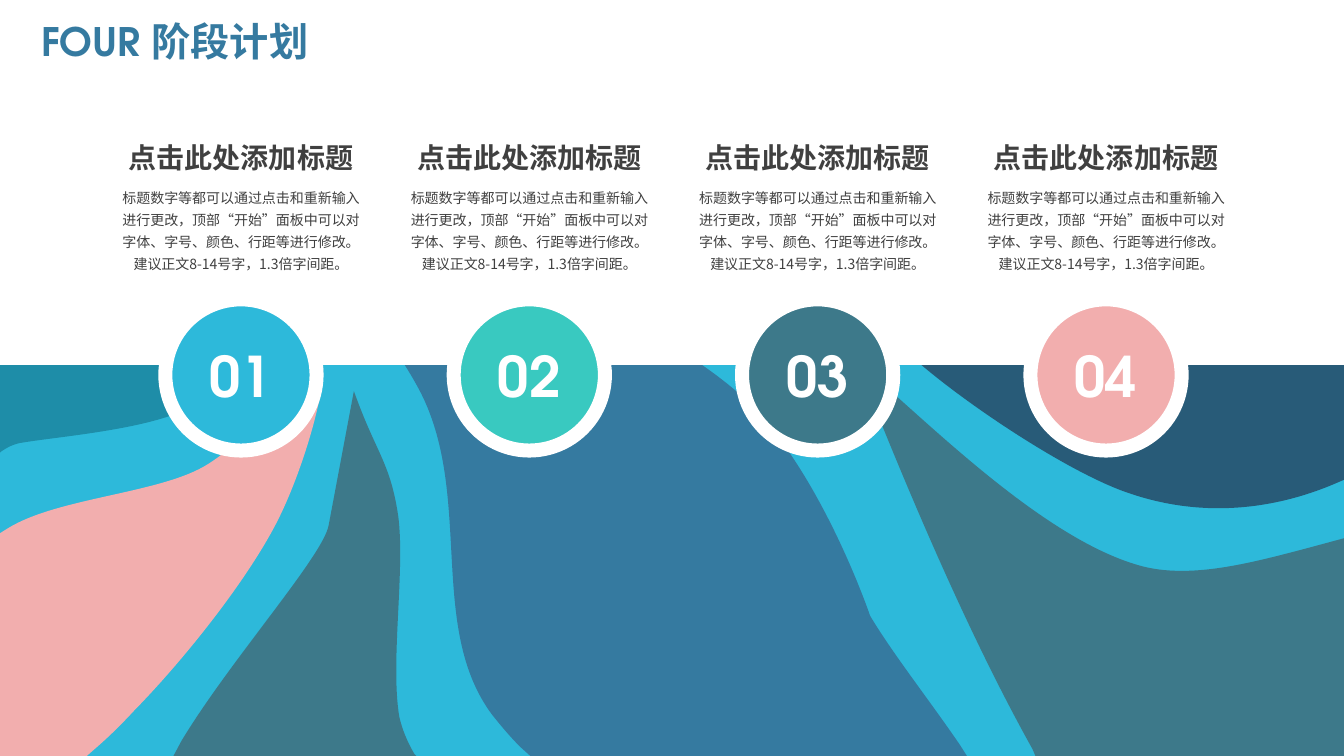
from lxml import etree
from pptx import Presentation
from pptx import util as u
from pptx.dml.color import RGBColor
from pptx.enum import lang, shapes, text
from pptx.oxml import ns

COLORS = {
    "sky": "2DB9DA", "lagoon": "1E8DA8", "pink": "F2AEAE", "slate": "3D798A",
    "blue": "357AA0", "navy": "285B78", "mint": "39C9C0", "white": "FFFFFF", "ink": "404040",
}
DISPLAY, CJK = "TeX Gyre Adventor", "Noto Sans CJK SC"

WAVES = [
    ("lagoon", [
        (0, 0), (0.33, 0), (0.38, 0.08), (0.87, 0.8, 1.61, 1.89, 1.95, 2.33),
        (2.4, 2.92, 2.73, 2.77, 2.72, 3.05), (2.71, 3.34, 2.31, 3.81, 1.89, 4.04),
        (1.48, 4.26, 0.59, 4.33, 0.23, 4.39), (0.14, 4.4, 0.07, 4.44, 0.01, 4.48), (0, 4.49)]),
    ("pink", [
        (3.15, 3.55), (3.16, 3.55, 3.17, 3.56, 3.18, 3.56),
        (3.29, 3.66, 3.03, 4.65, 2.72, 5.23), (2.41, 5.81, 1.81, 6.56, 1.33, 7.05),
        (1.21, 7.18, 1.08, 7.31, 0.94, 7.43), (0.86, 7.5), (0, 7.5), (0, 5.29), (0.08, 5.24),
        (0.57, 4.94, 1.54, 4.9, 2.02, 4.63), (2.53, 4.34, 3, 3.57, 3.15, 3.55)]),
    ("slate", [
        (3.51, 3.88), (3.73, 4.5, 3.87, 4.58, 3.95, 5.12), (4.02, 5.66, 3.87, 6.56, 3.96, 7.11),
        (3.99, 7.24, 4.04, 7.36, 4.11, 7.48), (4.13, 7.5), (1.72, 7.5), (1.8, 7.35),
        (2.29, 6.54, 3.21, 5.51, 3.26, 5.21)]),
    ("blue", [
        (1.14, 0), (2.78, 0), (2.85, 0.11), (3.12, 0.62, 3.5, 1.26, 4.02, 1.74),
        (4.84, 2.5, 6.62, 3.24, 7.39, 3.96), (8.15, 4.69, 8.63, 6.11, 8.63, 6.11),
        (8.85, 6.48, 9.22, 6.95, 9.52, 7.39), (9.59, 7.5), (5.26, 7.5), (5.16, 7.41),
        (5.05, 7.3, 4.96, 7.19, 4.88, 7.09), (4.24, 6.23, 4.69, 4.94, 4.18, 3.91),
        (3.66, 2.89, 2.3, 1.69, 1.77, 0.95), (1.51, 0.58, 1.29, 0.27, 1.15, 0.02)]),
    ("navy", [
        (13.19, 2.81), (13.33, 2.81), (13.33, 4.76), (13.26, 4.79),
        (12.66, 5.05, 11.94, 5.15, 11.19, 4.89), (10.45, 4.64, 8.98, 3.6, 8.79, 3.26),
        (9.32, 3.26, 10.25, 3.18, 10.98, 3.11), (11.51, 3.03, 12.41, 2.79, 13.19, 2.81)]),
    ("slate", [
        (8.49, 3.58), (9.14, 4.12, 10.31, 5.33, 11.3, 5.61),
        (11.79, 5.75, 12.39, 5.59, 12.96, 5.44), (13.33, 5.34), (13.33, 7.5), (10.27, 7.5),
        (10.24, 7.43), (9.43, 5.98, 8.72, 4.14, 8.49, 3.58)]),
]
STAGES = [("01", "sky"), ("02", "mint"), ("03", "slate"), ("04", "pink")]
STAGE_TITLE = "点击此处添加标题"
STAGE_BODY = ("标题数字等都可以通过点击和重新输入进行更改，顶部“开始”面板中可以对"
              "字体、字号、颜色、行距等进行修改。建议正文8-14号字，1.3倍字间距。")
FIRST_CENTER, STAGE_PITCH = 2.39, 2.86


def rgb(name):
    """Return the named palette colour."""
    return RGBColor.from_string(COLORS[name])


def box(center, top, width, height):
    """Return the EMU frame of a box centred on a stage."""
    return [u.Inches(v) for v in (center - width / 2, top, width, height)]


def paint(sp, color):
    """Give a shape a plain fill without outline or shadow."""
    sp.shadow.inherit = False
    sp.fill.solid()
    sp.fill.fore_color.rgb = rgb(color)
    sp.line.fill.background()


def write(sp, content, size, color, font=DISPLAY, bold=True, spacing=None,
          align=text.PP_ALIGN.CENTER):
    """Put one formatted paragraph into a shape."""
    sp.text_frame.text = content
    p = sp.text_frame.paragraphs[0]
    p.alignment = align
    p.line_spacing = spacing
    r = p.runs[0]
    r.font.size, r.font.bold, r.font.name = u.Pt(size), bold, font
    r.font.color.rgb = rgb(color)
    r.font.language_id = lang.MSO_LANGUAGE_ID.SIMPLIFIED_CHINESE
    etree.SubElement(r.font._element, ns.qn("a:ea")).set("typeface", CJK)


def bend(sp, segments):
    """Turn the line segments that have control points into Bezier curves."""
    lines = list(sp._element.iter(ns.qn("a:lnTo")))
    for line, segment in zip(lines, segments[1:]):
        if len(segment) == 2:
            continue
        curve = etree.Element(ns.qn("a:cubicBezTo"))
        for x, y in zip(segment[::2], segment[1::2]):
            point = etree.SubElement(curve, ns.qn("a:pt"))
            point.set("x", str(u.Inches(x) - sp.left))
            point.set("y", str(u.Inches(y) - sp.top))
        line.getparent().replace(line, curve)


def add_wave(s, color, segments):
    """Draw one curved area of the background."""
    points = [(u.Inches(segment[-2]), u.Inches(segment[-1])) for segment in segments]
    builder = s.shapes.build_freeform(*points[0])
    builder.add_line_segments(points[1:], close=True)
    sp = builder.convert_to_shape()
    bend(sp, segments)
    paint(sp, color)


def add_text(s, frame, content, size, color, wrap=True, **style):
    """Add a text box and return its text frame."""
    sp = s.shapes.add_textbox(*frame)
    sp.text_frame.word_wrap = wrap
    write(sp, content, size, color, **style)
    return sp.text_frame


def add_stage(s, center, number, color):
    """Add the numbered circle, heading and description of a stage."""
    sp = s.shapes.add_shape(shapes.MSO_SHAPE.OVAL, *box(center, 2.97, 1.5, 1.5))
    paint(sp, color)
    sp.line.color.rgb = rgb("white")
    sp.line.width = u.Pt(10)
    sp.text_frame.vertical_anchor = text.MSO_ANCHOR.MIDDLE
    write(sp, number, 40, "white")
    body = add_text(s, box(center, 1.78, 2.59, 0.98), STAGE_BODY, 10, "ink",
                    font=CJK, bold=False, spacing=1.3)
    heading = add_text(s, box(center, 1.24, 2.45, 0.54), STAGE_TITLE, 20, "ink",
                       wrap=False, spacing=1.3)
    for tf in (body, heading):
        tf.auto_size = text.MSO_AUTO_SIZE.SHAPE_TO_FIT_TEXT


def main():
    """Build the stage plan slide."""
    prs = Presentation()
    prs.slide_width, prs.slide_height = u.Inches(13.33), u.Inches(7.5)
    s = prs.slides.add_slide(prs.slide_layouts[6])
    s.background.fill.solid()
    s.background.fill.fore_color.rgb = rgb("sky")
    for color, segments in WAVES:
        add_wave(s, color, segments)
    panel = s.shapes.add_shape(shapes.MSO_SHAPE.RECTANGLE, 0, 0, prs.slide_width, u.Inches(3.62))
    paint(panel, "white")
    title = add_text(s, box(4.55, 0.11, 8.48, 0.65), "FOUR 阶段计划", 28, "blue",
                     spacing=0.9, align=text.PP_ALIGN.LEFT)
    title.vertical_anchor = text.MSO_ANCHOR.MIDDLE
    for index, (number, color) in enumerate(STAGES):
        add_stage(s, FIRST_CENTER + index * STAGE_PITCH, number, color)
    prs.save("out.pptx")


if __name__ == "__main__":
    main()
